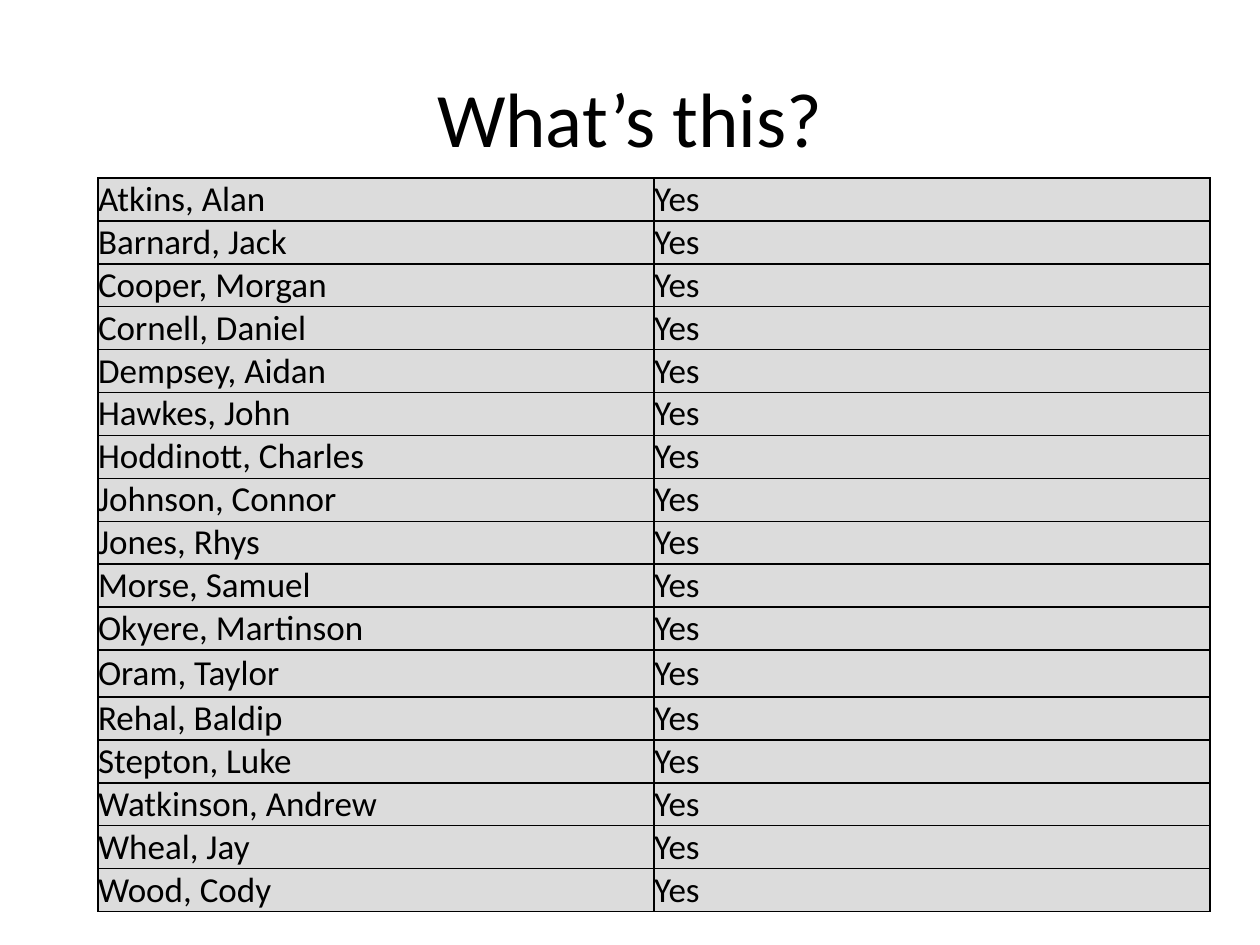
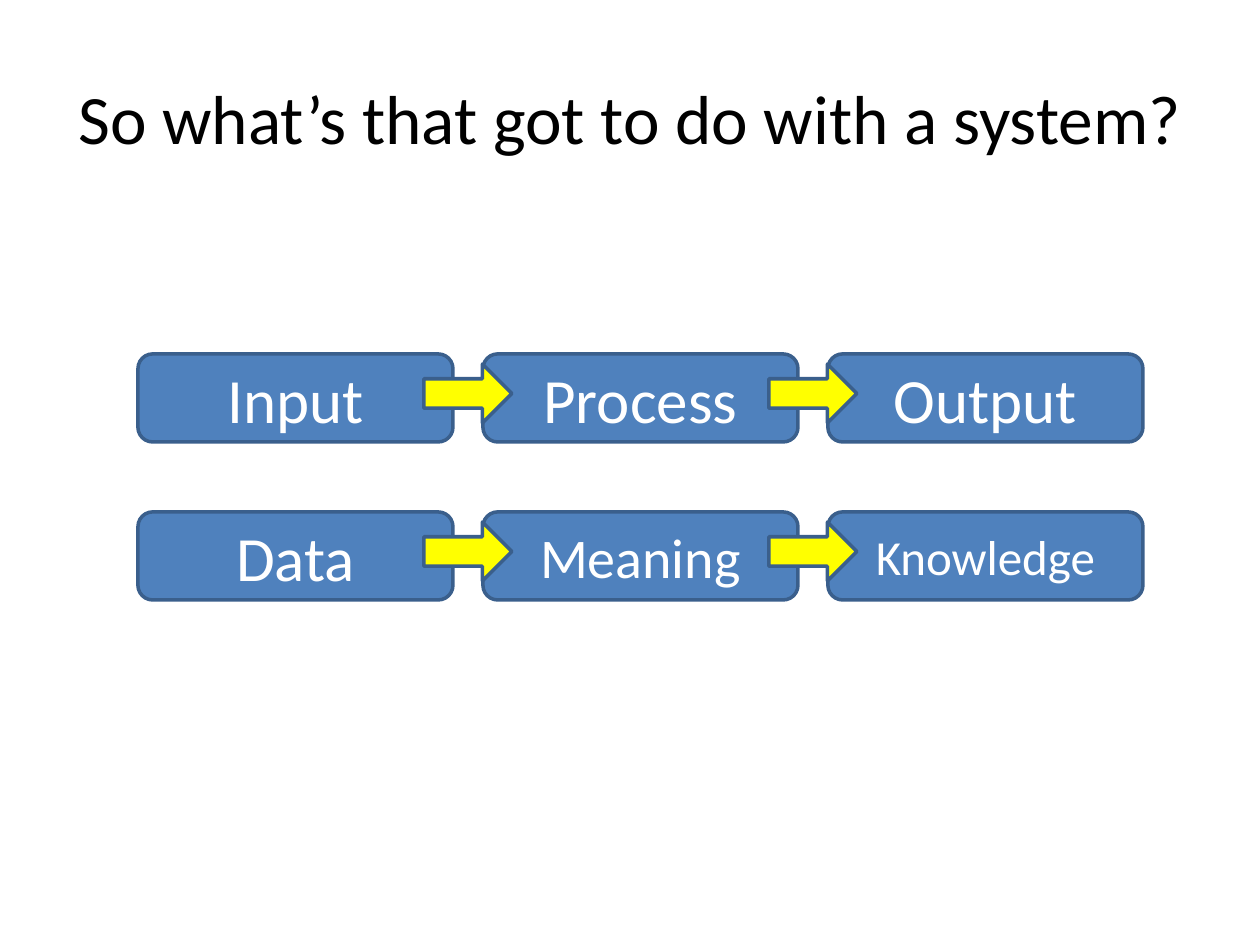
from lxml import etree
from pptx import Presentation
from pptx import util as u
from pptx.dml.color import RGBColor
from pptx.enum import shapes, text
from pptx.oxml.ns import qn

HUES = {"ink": "000000", "paper": "FFFFFF", "cell": "DCDCDC",
        "box": "4F81BD", "edge": "3A5F8C", "arrow": "FFFF00"}
FONT = "Calibri"
TITLES = [("What’s this?", 44), ("So what’s that got to do with a system?", 39.6)]
NAMES = ["Atkins, Alan", "Barnard, Jack", "Cooper, Morgan", "Cornell, Daniel",
         "Dempsey, Aidan", "Hawkes, John", "Hoddinott, Charles", "Johnson, Connor",
         "Jones, Rhys", "Morse, Samuel", "Okyere, Martinson", "Oram, Taylor",
         "Rehal, Baldip", "Stepton, Luke", "Watkinson, Andrew", "Wheal, Jay",
         "Wood, Cody"]
REPLY = "Yes"
TALL = "Oram, Taylor"
FLOWS = [[("Input", 36), ("Process", 36), ("Output", 36)],
         [("Data", 36), ("Meaning", 32), ("Knowledge", 28)]]

TITLE = (63, 38, 1134, 158)
GRID = (98, 178)
COL, ROW, TALLROW = 556, 35, 47
BOX = (138, 354, 315, 88)
STEP, DROP = 345, 158
ARROW = (424, 364, 88, 59)


def px(n):
    return u.Emu(round(n * 914400 / 126))


def rgb(key):
    return RGBColor.from_string(HUES[key])


def write(frame, words, size, hue, align):
    frame.text = words
    frame.vertical_anchor = text.MSO_ANCHOR.MIDDLE
    line = frame.paragraphs[0]
    line.alignment = align
    font = line.runs[0].font
    font.name, font.size, font.bold = FONT, u.Pt(size), False
    font.color.rgb = rgb(hue)


def start(deck, words, size):
    slide = deck.slides.add_slide(deck.slide_layouts[5])
    title = slide.shapes.title
    title.left, title.top, title.width, title.height = map(px, TITLE)
    title.text_frame.word_wrap = True
    title.text_frame.auto_size = text.MSO_AUTO_SIZE.NONE
    write(title.text_frame, words, size, "ink", text.PP_ALIGN.CENTER)
    return slide


def border(cell):
    props = cell._tc.get_or_add_tcPr()
    for i, side in enumerate(("lnL", "lnR", "lnT", "lnB")):
        line = etree.Element(qn(f"a:{side}"), w=str(u.Pt(1)))
        fill = etree.SubElement(line, qn("a:solidFill"))
        etree.SubElement(fill, qn("a:srgbClr"), val=HUES["ink"])
        props.insert(i, line)


def register(slide):
    high = ROW * (len(NAMES) - 1) + TALLROW
    area = map(px, (*GRID, 2 * COL, high))
    table = slide.shapes.add_table(len(NAMES), 2, *area).table
    table.first_row = table.horz_banding = False
    for col in table.columns:
        col.width = px(COL)
    for row, name in zip(table.rows, NAMES):
        row.height = px(TALLROW if name == TALL else ROW)
        for cell, words in zip(row.cells, (name, REPLY)):
            cell.margin_left = cell.margin_right = 0
            cell.margin_top = cell.margin_bottom = 0
            write(cell.text_frame, words, 20, "ink", text.PP_ALIGN.LEFT)
            cell.vertical_anchor = text.MSO_ANCHOR.MIDDLE
            cell.fill.solid()
            cell.fill.fore_color.rgb = rgb("cell")
            border(cell)


def draw(slide, kind, area, hue, col, row):
    x, y, wide, high = area
    place = map(px, (x + col * STEP, y + row * DROP, wide, high))
    shape = slide.shapes.add_shape(kind, *place)
    shape.shadow.inherit = False
    shape.fill.solid()
    shape.fill.fore_color.rgb = rgb(hue)
    shape.line.color.rgb = rgb("edge")
    shape.line.width = u.Pt(2)
    return shape


def flows(slide):
    kinds = shapes.MSO_SHAPE
    for row, flow in enumerate(FLOWS):
        for col, (words, size) in enumerate(flow):
            box = draw(slide, kinds.ROUNDED_RECTANGLE, BOX, "box", col, row)
            write(box.text_frame, words, size, "paper", text.PP_ALIGN.CENTER)
        for col in range(len(flow) - 1):
            draw(slide, kinds.RIGHT_ARROW, ARROW, "arrow", col, row)


def main():
    deck = Presentation()
    deck.slide_width, deck.slide_height = px(1260), px(945)
    for title, fill in zip(TITLES, (register, flows)):
        fill(start(deck, *title))
    deck.save("out.pptx")


if __name__ == "__main__":
    main()
